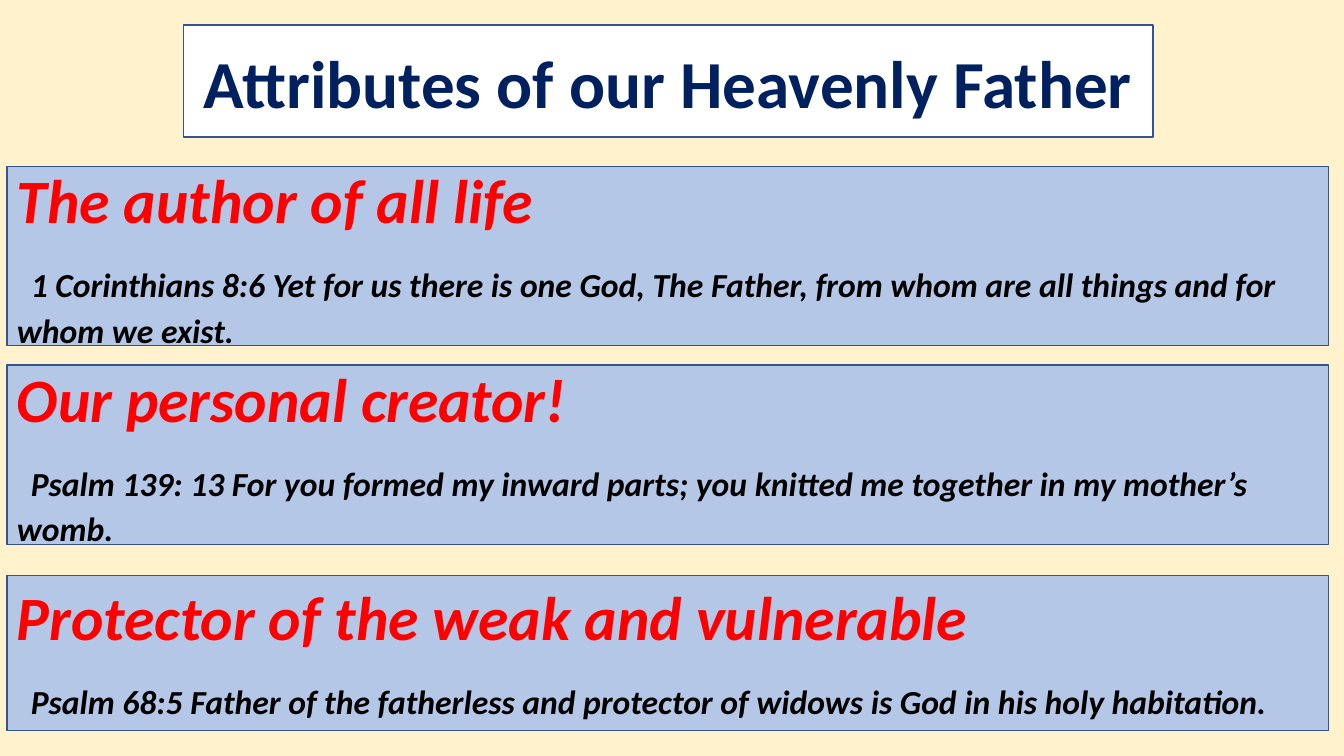
"""Build a slide of three attributes, each with its verse, under a framed title."""
from dataclasses import dataclass

from pptx import Presentation
from pptx.dml.color import RGBColor
from pptx.enum.shapes import MSO_SHAPE as Shape
from pptx.enum.text import MSO_ANCHOR as Anchor, PP_ALIGN as Align
from pptx.util import Pt


@dataclass
class Attribute:
    top: float
    height: float
    heading: str
    verse: str


ATTRIBUTES = [
    Attribute(118.8, 128.2, "The author of all life",
              "1 Corinthians 8:6 Yet for us there is one God, The Father, "
              "from whom are all things and for whom we exist."),
    Attribute(260.6, 128.2, "Our personal creator!",
              "Psalm 139: 13 For you formed my inward parts; "
              "you knitted me together in my mother’s womb."),
    Attribute(411.1, 110.9, "Protector of the weak and vulnerable",
              "Psalm 68:5 Father of the fatherless and protector of widows "
              "is God in his holy habitation."),
]


def rgb(color: str) -> RGBColor:
    return RGBColor.from_string(color)


def add_box(s, left: float, top: float, width: float, height: float, fill: str):
    sp = s.shapes.add_shape(Shape.RECTANGLE, Pt(left), Pt(top), Pt(width), Pt(height))
    sp.shadow.inherit = False
    sp.fill.solid()
    sp.fill.fore_color.rgb = rgb(fill)
    sp.line.color.rgb = rgb("325491")
    sp.line.width = Pt(1)
    tf = sp.text_frame
    tf.word_wrap = True
    tf.vertical_anchor = Anchor.MIDDLE
    return tf


def style(r, size: float, color: str, italic: bool = True) -> None:
    r.font.name = "Calibri"
    r.font.size = Pt(size)
    r.font.bold = True
    r.font.italic = italic
    r.font.color.rgb = rgb(color)


def add_title(s, text: str) -> None:
    tf = add_box(s, 131, 18, 692.6, 80, "FFFFFF")
    tf.text = text
    p = tf.paragraphs[0]
    p.alignment = Align.CENTER
    style(p.runs[0], 48, "002060", italic=False)


def add_attribute(s, item: Attribute) -> None:
    tf = add_box(s, 5, item.top, 944, item.height, "B4C7E7")
    tf.text = item.heading
    heading = tf.paragraphs[0]
    heading.alignment = Align.LEFT
    style(heading.runs[0], 44, "FF0000")
    verse = tf.add_paragraph()
    verse.alignment = Align.LEFT
    verse.text = " "
    style(verse.runs[0], 44, "000000")
    r = verse.add_run()
    r.text = item.verse
    style(r, 24, "000000")


def main() -> None:
    prs = Presentation()
    prs.slide_width, prs.slide_height = Pt(960), Pt(540)
    s = prs.slides.add_slide(prs.slide_layouts[6])
    s.background.fill.solid()
    s.background.fill.fore_color.rgb = rgb("FFF2CC")
    add_title(s, "Attributes of our Heavenly Father")
    for item in ATTRIBUTES:
        add_attribute(s, item)
    prs.save("out.pptx")


if __name__ == "__main__":
    main()
